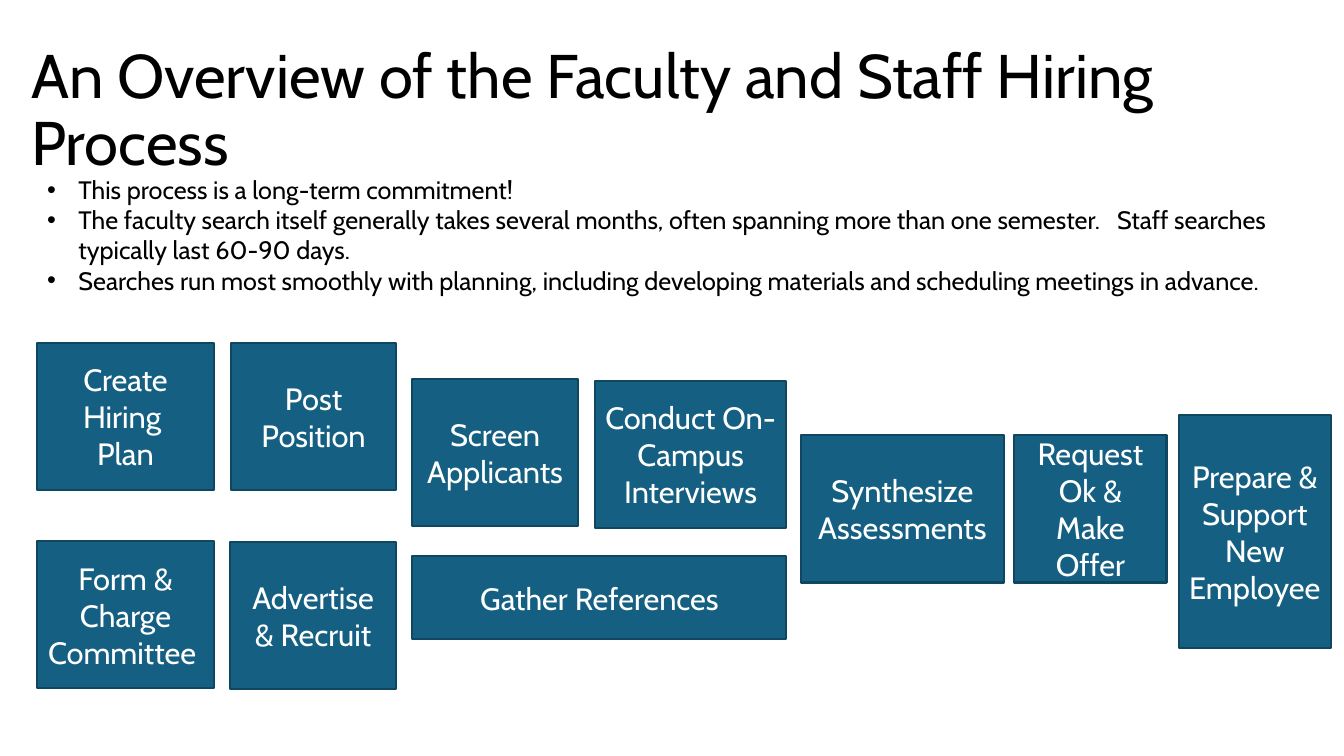
from lxml.etree import SubElement
from pptx import Presentation
from pptx.dml.color import RGBColor
from pptx.enum.shapes import MSO_SHAPE
from pptx.enum.text import MSO_ANCHOR, PP_ALIGN
from pptx.oxml.ns import qn
from pptx.util import Inches, Pt

COLORS = {"text": "000000", "fill": "156082", "line": "104760", "label": "FFFFFF"}
FONT = "Cabin"
TITLE = "An Overview of the Faculty and Staff Hiring Process"
POINTS = [
    "This process is a long-term commitment!",
    "The faculty search itself generally takes several months, often spanning "
    "more than one semester.   Staff searches typically last 60-90 days.",
    "Searches run most smoothly with planning, including developing materials "
    "and scheduling meetings in advance.",
]
STEP_H = 1.46
STEPS = [
    (["Create Hiring ", "Plan"], (0.37, 3.4, 1.75, STEP_H), 0.1),
    (["Form & Charge", "Committee "], (0.37, 5.37, 1.75, STEP_H), 0),
    (["Post", "Position"], (2.29, 3.4, 1.64, STEP_H), 0.1),
    (["Advertise & Recruit"], (2.28, 5.38, 1.65, STEP_H), 0.1),
    (["Screen Applicants"], (4.09, 3.76, 1.64, STEP_H), 0.1),
    (["Conduct On-Campus Interviews"], (5.9, 3.78, 1.9, STEP_H), 0.1),
    (["Gather References"], (4.09, 5.52, 3.71, 0.82), 0.1),
    (["Synthesize Assessments"], (7.94, 4.32, 2.02, STEP_H), 0.1),
    (["Request Ok & Make Offer"], (10.06, 4.32, 1.51, STEP_H), 0.1),
    (["Prepare & Support New Employee "], (11.69, 4.12, 1.51, 2.31), 0.1),
]


def write(tf, lines, size, color, **formats):
    """Fill a text frame with one paragraph per line and return the paragraphs."""
    tf.word_wrap = True
    for i, line in enumerate(lines):
        p = tf.paragraphs[0] if i == 0 else tf.add_paragraph()
        for name, value in formats.items():
            setattr(p, name, value)
        r = p.add_run()
        r.text = line
        for name, value in {"name": FONT, "size": Pt(size)}.items():
            setattr(r.font, name, value)
        r.font.color.rgb = RGBColor.from_string(COLORS[color])
    return tf.paragraphs


def add_title(s, box):
    """Place the slide title in the box."""
    sp = s.shapes.add_textbox(*map(Inches, box))
    write(sp.text_frame, [TITLE], 44, "text", line_spacing=0.9)


def add_points(s, box):
    """Place the bulleted points in the box."""
    sp = s.shapes.add_textbox(*map(Inches, box))
    for p in write(sp.text_frame, POINTS, 18, "text"):
        pPr = p._p.get_or_add_pPr()
        pPr.set("marL", str(Inches(0.31)))
        pPr.set("indent", str(-Inches(0.31)))
        SubElement(pPr, qn("a:buFont")).set("typeface", "Arial")
        SubElement(pPr, qn("a:buChar")).set("char", "•")


def add_step(s, lines, box, margin):
    """Place one process step as a labelled rectangle filling the box."""
    sp = s.shapes.add_shape(MSO_SHAPE.RECTANGLE, *map(Inches, box))
    sp.shadow.inherit = False
    sp.fill.solid()
    sp.fill.fore_color.rgb = RGBColor.from_string(COLORS["fill"])
    sp.line.color.rgb = RGBColor.from_string(COLORS["line"])
    sp.line.width = Pt(1.5)
    tf = sp.text_frame
    formats = {
        "margin_left": Inches(margin),
        "margin_right": Inches(margin),
        "vertical_anchor": MSO_ANCHOR.MIDDLE,
    }
    for name, value in formats.items():
        setattr(tf, name, value)
    write(tf, lines, 22, "label", alignment=PP_ALIGN.CENTER)


def main():
    """Build the hiring overview slide and save it."""
    prs = Presentation()
    prs.slide_width, prs.slide_height = Inches(13.33), Inches(7.5)
    s = prs.slides.add_slide(prs.slide_layouts[6])
    add_title(s, (0.21, 0.4, 12.18, 0.82))
    add_points(s, (0.37, 1.68, 12.41, 1.62))
    for step in STEPS:
        add_step(s, *step)
    prs.save("out.pptx")


if __name__ == "__main__":
    main()
